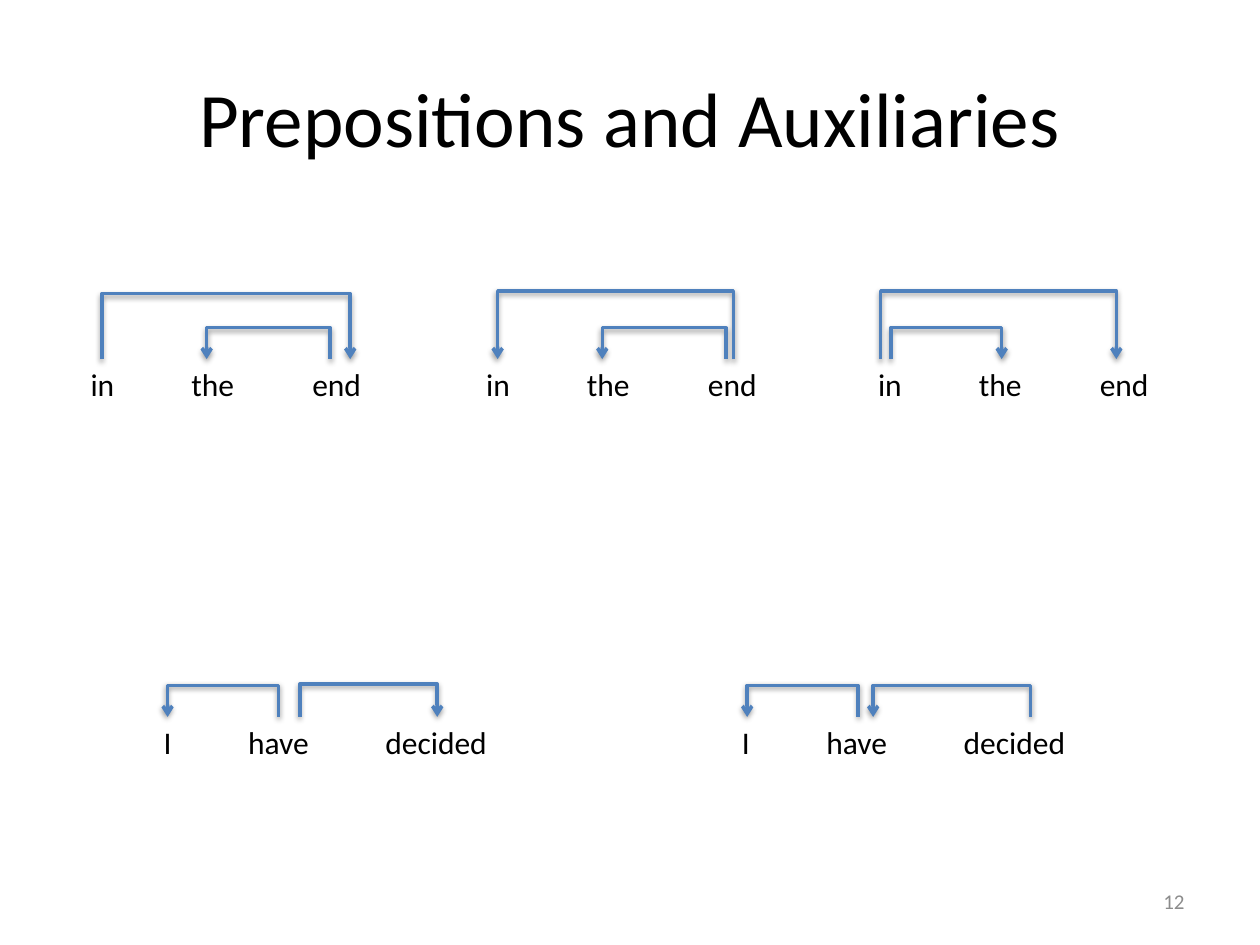
from lxml import etree
from pptx import Presentation
from pptx.dml.color import RGBColor
from pptx.enum.text import MSO_ANCHOR, MSO_AUTO_SIZE, PP_ALIGN
from pptx.oxml import parse_xml
from pptx.oxml.ns import qn
from pptx.util import Inches, Pt

MIDDLE = MSO_ANCHOR.MIDDLE
FIT = MSO_AUTO_SIZE.SHAPE_TO_FIT_TEXT
LEFT, CENTER, RIGHT = PP_ALIGN.LEFT, PP_ALIGN.CENTER, PP_ALIGN.RIGHT


class Theme:
    font = "Calibri"
    ink = RGBColor(0, 0, 0)
    gray = RGBColor(0x8C, 0x8C, 0x8C)
    blue = RGBColor(0x4F, 0x81, 0xBD)
    title, word, number = Pt(44), Pt(18), Pt(12)
    line = Pt(2)


SHADOW = (
    '<a:effectLst xmlns:a="http://schemas.openxmlformats.org/drawingml/2006/main">'
    '<a:outerShdw blurRad="40000" dist="20000" dir="5400000" rotWithShape="0">'
    '<a:srgbClr val="000000"><a:alpha val="38000"/></a:srgbClr>'
    '</a:outerShdw></a:effectLst>'
)

# Each word: text, offset from the phrase's left edge, box width
END = [("in", 0, 0.39), ("the", 0.8, 0.54), ("end", 1.76, 0.59)]
HAVE = [("I", 0, 0.27), ("have", 0.67, 0.69), ("decided", 1.76, 1.02)]

# Each phrase: left, top, words, arcs (head offset, dependent offset, height)
PHRASES = [
    (0.62, 2.85, END, [(2.0, 1.02, 0.25), (0.19, 2.16, 0.52)]),
    (3.76, 2.85, END, [(2.0, 1.02, 0.25), (2.06, 0.19, 0.54)]),
    (6.87, 2.85, END, [(0.12, 1.99, 0.54), (0.2, 1.08, 0.25)]),
    (1.2, 5.69, HAVE, [(1.01, 0.13, 0.25), (1.18, 2.27, 0.26)]),
    (5.79, 5.69, HAVE, [(2.39, 1.14, 0.25), (1.02, 0.14, 0.25)]),
]


def write(frame, text, size, color, align):
    frame.text = text
    para = frame.paragraphs[0]
    para.alignment = align
    para.font.name = Theme.font
    para.font.size = size
    para.font.color.rgb = color


def draw_arc(slide, start, end, base, height):
    """Draw a square arc over the words, with its arrowhead at end."""
    top = base - height
    pen = slide.shapes.build_freeform(Inches(start), Inches(base))
    pen.add_line_segments(
        [(Inches(x), Inches(y)) for x, y in ((start, top), (end, top), (end, base))],
        close=False,
    )
    arc = pen.convert_to_shape()
    arc.fill.background()
    arc.line.color.rgb = Theme.blue
    arc.line.width = Theme.line
    props = arc._element.spPr
    etree.SubElement(props.find(qn("a:ln")), qn("a:tailEnd"), type="arrow")
    props.append(parse_xml(SHADOW))


deck = Presentation()
deck.slide_width, deck.slide_height = Inches(10), Inches(7.5)
slide = deck.slides.add_slide(deck.slide_layouts[5])

title = slide.shapes.title
title.left, title.top = Inches(0.5), Inches(0.3)
title.width, title.height = Inches(9), Inches(1.25)
title.text_frame.vertical_anchor = MIDDLE
write(title.text_frame, "Prepositions and Auxiliaries", Theme.title, Theme.ink, CENTER)

number = slide.shapes.add_textbox(Inches(7.17), Inches(6.95), Inches(2.33), Inches(0.4))
number.text_frame.word_wrap = True
number.text_frame.vertical_anchor = MIDDLE
write(number.text_frame, "12", Theme.number, Theme.gray, RIGHT)

for left, top, words, arcs in PHRASES:
    for text, shift, width in words:
        box = slide.shapes.add_textbox(
            Inches(left + shift), Inches(top), Inches(width), Inches(0.4)
        )
        box.text_frame.word_wrap = False
        box.text_frame.auto_size = FIT
        write(box.text_frame, text, Theme.word, Theme.ink, LEFT)
    for start, end, height in arcs:
        draw_arc(slide, left + start, left + end, top, height)

deck.save("out.pptx")
